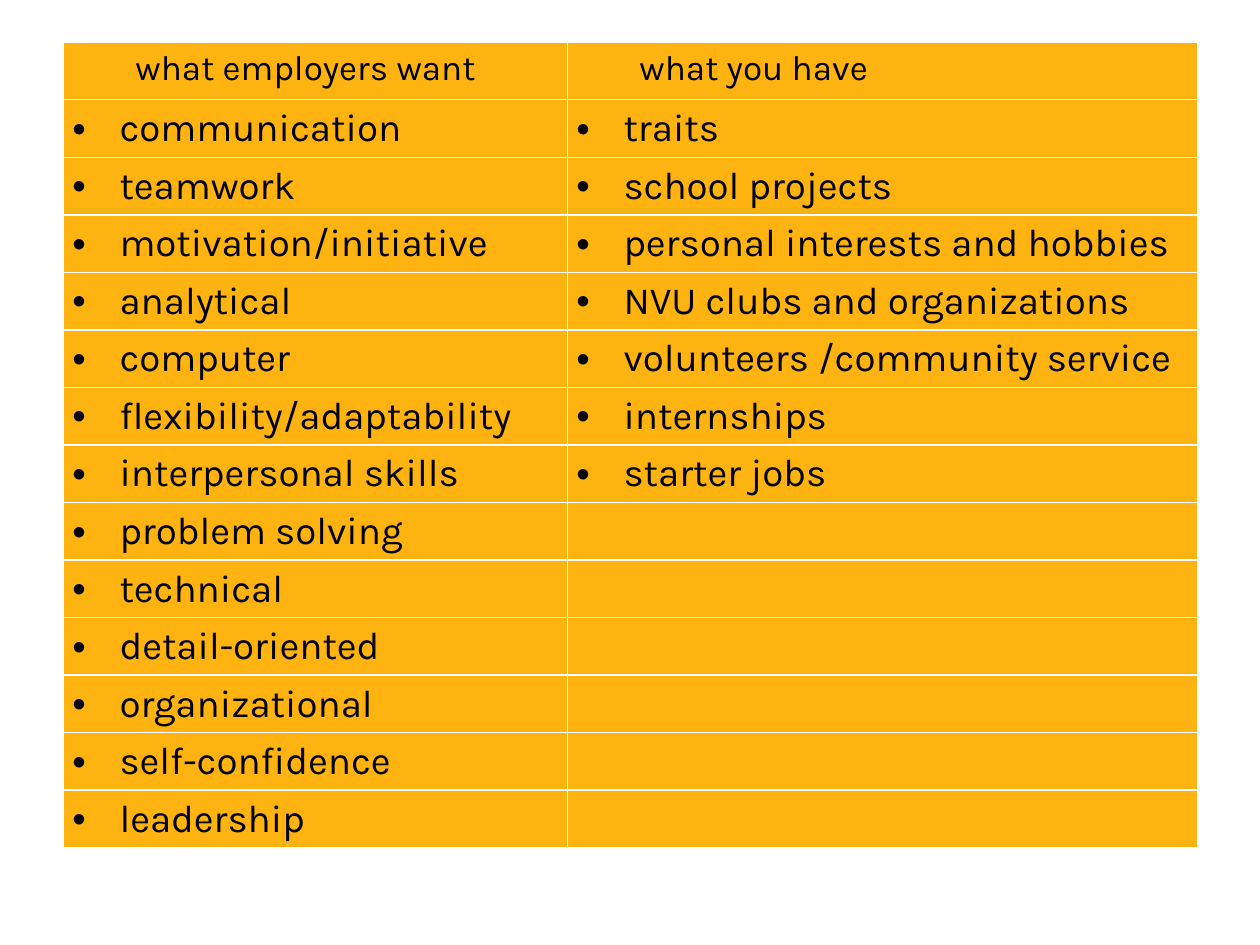
from dataclasses import dataclass
from itertools import zip_longest

from lxml import etree
from pptx import Presentation
from pptx.dml.color import RGBColor
from pptx.oxml.ns import qn
from pptx.util import Cm, Pt

BLANK = 6


@dataclass
class Theme:
    font: str = "Karla"
    ink: str = "000000"
    gold: str = "FFB310"
    rule: str = "FFFFFF"
    head: int = 20
    body: int = 22
    line: float = 1.15


class Deck:
    def __init__(self, theme):
        self.theme = theme
        self.prs = Presentation()
        self.prs.slide_width, self.prs.slide_height = Cm(25.4), Cm(19.05)
        self.slide = self.prs.slides.add_slide(self.prs.slide_layouts[BLANK])

    def table(self, rows, left, top, widths, height):
        frame = self.slide.shapes.add_table(
            len(rows), len(widths), left, top, sum(widths), height * len(rows))
        grid = frame.table
        grid.first_row = grid.horz_banding = False
        for col, width in zip(grid.columns, widths):
            col.width = width
        for r, texts in enumerate(rows):
            grid.rows[r].height = height
            for c, text in enumerate(texts):
                self.cell(grid.cell(r, c), text, r == 0)

    def cell(self, cell, text, head):
        cell.fill.solid()
        cell.fill.fore_color.rgb = RGBColor.from_string(self.theme.gold)
        cell.margin_left = cell.margin_right = Cm(0.18)
        cell.margin_top = cell.margin_bottom = 0
        self.border(cell)
        if text:
            para = cell.text_frame.paragraphs[0]
            para.text = text
            para.line_spacing = self.theme.line
            self.type(para.runs[0].font, head)
            self.indent(para, head)

    def type(self, font, head):
        font.name = self.theme.font
        font.size = Pt(self.theme.head if head else self.theme.body)
        font.bold = False
        font.color.rgb = RGBColor.from_string(self.theme.ink)

    def indent(self, para, head):
        props = para._p.get_or_add_pPr()
        if head:
            props.set("marL", str(Cm(1.27)))
            props.set("indent", "0")
        else:
            props.set("marL", str(Cm(0.95)))
            props.set("indent", str(-Cm(0.95)))
            etree.SubElement(props, qn("a:buFont"), typeface="Arial")
            etree.SubElement(props, qn("a:buChar"), char="•")

    def border(self, cell):
        props = cell._tc.get_or_add_tcPr()
        for spot, side in enumerate("LRTB"):
            line = etree.Element(qn(f"a:ln{side}"), w=str(Pt(1)))
            fill = etree.SubElement(line, qn("a:solidFill"))
            etree.SubElement(fill, qn("a:srgbClr"), val=self.theme.rule)
            props.insert(spot, line)


# Wording of the two columns, heading first
WANT = [
    "what employers want", "communication", "teamwork",
    "motivation/initiative", "analytical", "computer",
    "flexibility/adaptability", "interpersonal skills", "problem solving",
    "technical", "detail-oriented", "organizational", "self-confidence",
    "leadership",
]
HAVE = [
    "what you have", "traits", "school projects",
    "personal interests and hobbies", "NVU clubs and organizations",
    "volunteers /community service", "internships", "starter jobs",
]


def main():
    deck = Deck(Theme())
    # Skills table
    rows = list(zip_longest(WANT, HAVE, fillvalue=""))
    deck.table(rows, Cm(1.28), Cm(0.85), [Cm(10.16), Cm(12.7)], Cm(1.16))
    deck.prs.save("out.pptx")


if __name__ == "__main__":
    main()
